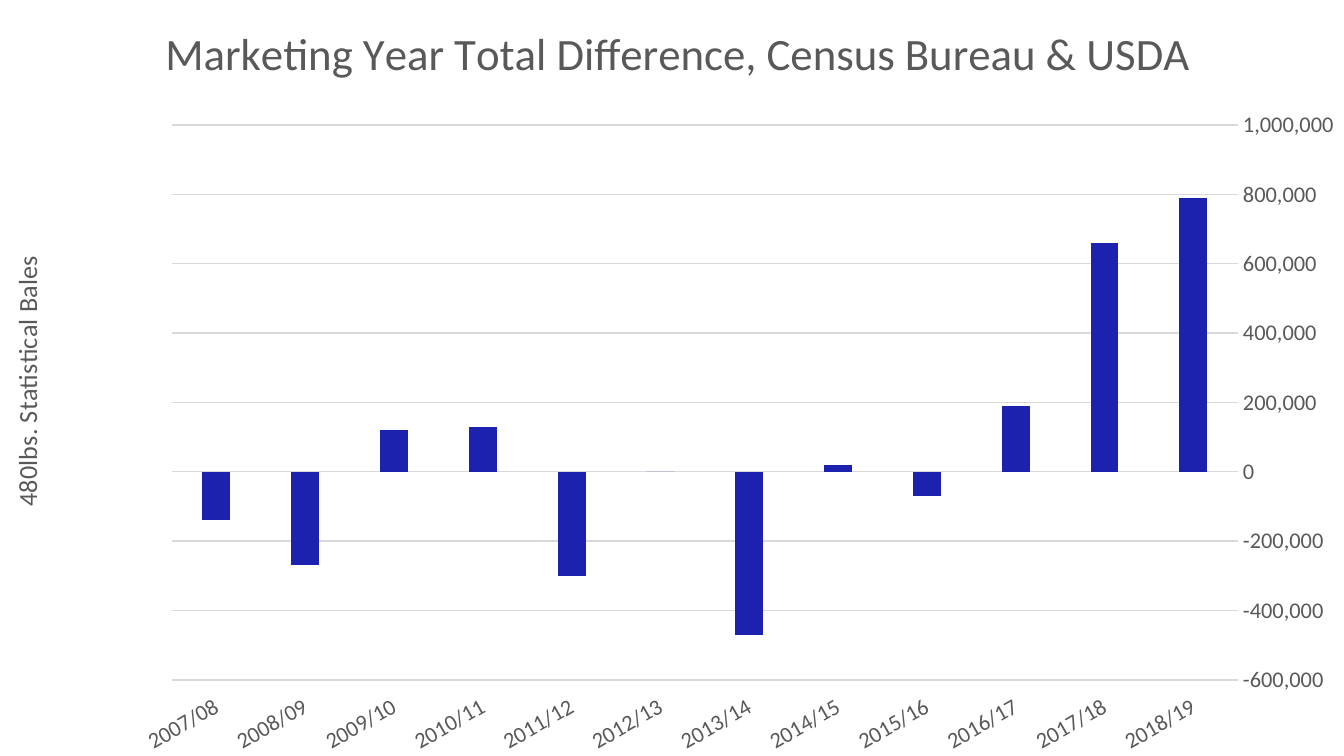
from typing import NamedTuple

import pptx
import pptx.chart.data
import pptx.dml.color
import pptx.enum.chart
import pptx.oxml
import pptx.oxml.ns
import pptx.util
from pptx.util import Inches

GREY = pptx.dml.color.RGBColor(0x59, 0x59, 0x59)
LIGHT_GREY = pptx.dml.color.RGBColor(0xD9, 0xD9, 0xD9)
BLUE = pptx.dml.color.RGBColor(0x1C, 0x21, 0xAE)
FONT = "Calibri"
SLIDE_WIDTH = Inches(10)
SLIDE_HEIGHT = Inches(10 * 9 / 16)
qn = pptx.oxml.ns.qn


class YearDifference(NamedTuple):
    marketing_year: str
    bales: int


DIFFERENCES = [
    YearDifference("2018/19", 790000),
    YearDifference("2017/18", 660000),
    YearDifference("2016/17", 190000),
    YearDifference("2015/16", -70000),
    YearDifference("2014/15", 20000),
    YearDifference("2013/14", -470000),
    YearDifference("2012/13", 0),
    YearDifference("2011/12", -300000),
    YearDifference("2010/11", 130000),
    YearDifference("2009/10", 120000),
    YearDifference("2008/09", -270000),
    YearDifference("2007/08", -140000),
]


def style_font(font, size: float) -> None:
    font.name = FONT
    font.size = pptx.util.Pt(size)
    font.bold = False
    font.color.rgb = GREY


def write_title(title, text: str, *, size: float) -> None:
    title.text_frame.text = text
    style_font(title.text_frame.paragraphs[0].runs[0].font, size)


def place(element, index: int, left: int, top: int, **settings) -> None:
    """Give a chart part a manual layout, inserted as the child at index."""
    for automatic in element.findall(qn("c:layout")):
        element.remove(automatic)
    settings.update(xMode="edge", yMode="edge",
                    x=left / SLIDE_WIDTH, y=top / SLIDE_HEIGHT)
    order = ("layoutTarget", "xMode", "yMode", "x", "y", "w", "h")
    values = "".join(f'<c:{key} val="{settings[key]}"/>'
                     for key in order if key in settings)
    element.insert(index, pptx.oxml.parse_xml(
        f'<c:layout {pptx.oxml.ns.nsdecls("c")}>'
        f"<c:manualLayout>{values}</c:manualLayout></c:layout>"))


def style_line(line) -> None:
    line.color.rgb = LIGHT_GREY
    line.width = pptx.util.Pt(0.75)


def rotate_text(holder, degrees: int) -> None:
    body = holder.find(".//" + qn("a:bodyPr"))
    body.set("rot", str(degrees * 60000))
    body.set("vert", "horz")


def style_axes(chart) -> None:
    years, bales = chart.category_axis, chart.value_axis
    for axis in (years, bales):
        axis.major_tick_mark = pptx.enum.chart.XL_TICK_MARK.NONE
        axis.minor_tick_mark = pptx.enum.chart.XL_TICK_MARK.NONE
        style_font(axis.tick_labels.font, 12)

    years.reverse_order = True
    years.crosses = pptx.enum.chart.XL_AXIS_CROSSES.MINIMUM
    years.tick_label_position = pptx.enum.chart.XL_TICK_LABEL_POSITION.LOW
    style_line(years.format.line)
    rotate_text(chart.element.find(".//" + qn("c:catAx")), -30)

    bales.minimum_scale, bales.maximum_scale = -600000, 1000000
    bales.major_unit = 200000
    bales.tick_labels.number_format = "#,##0"
    bales.tick_labels.number_format_is_linked = False
    bales.format.line.fill.background()
    bales.has_major_gridlines = True
    style_line(bales.major_gridlines.format.line)
    write_title(bales.axis_title, "480lbs. Statistical Bales", size=14)
    rotate_text(bales.axis_title.element, -90)
    place(bales.axis_title.element, 1, Inches(0.03), Inches(1.87))


def add_difference_chart(slide) -> None:
    data = pptx.chart.data.CategoryChartData(number_format="#,##0")
    data.categories = [row.marketing_year for row in DIFFERENCES]
    data.add_series("Series 1", [row.bales for row in DIFFERENCES])
    chart = slide.shapes.add_chart(
        pptx.enum.chart.XL_CHART_TYPE.COLUMN_CLUSTERED,
        Inches(0), Inches(0), SLIDE_WIDTH, SLIDE_HEIGHT, data).chart
    style_font(chart.font, 10)
    chart.has_legend = False

    write_title(chart.chart_title,
                "Marketing Year Total Difference, Census Bureau & USDA", size=24)
    chart.chart_title.include_in_layout = False
    place(chart.chart_title.element, 1, Inches(1.17), Inches(0.11))
    place(chart.element.find(".//" + qn("c:plotArea")), 0,
          Inches(1.28), Inches(0.93), layoutTarget="inner",
          w=Inches(7.93) / SLIDE_WIDTH, h=Inches(4.13) / SLIDE_HEIGHT)

    columns = chart.plots[0]
    columns.gap_width, columns.overlap = 219, -27
    columns.vary_by_categories = False
    differences = columns.series[0]
    differences.invert_if_negative = False
    differences.format.fill.solid()
    differences.format.fill.fore_color.rgb = BLUE
    style_axes(chart)


def main() -> None:
    presentation = pptx.Presentation()
    presentation.slide_width, presentation.slide_height = SLIDE_WIDTH, SLIDE_HEIGHT
    slide = presentation.slides.add_slide(presentation.slide_layouts[6])
    add_difference_chart(slide)
    presentation.save("out.pptx")


if __name__ == "__main__":
    main()
